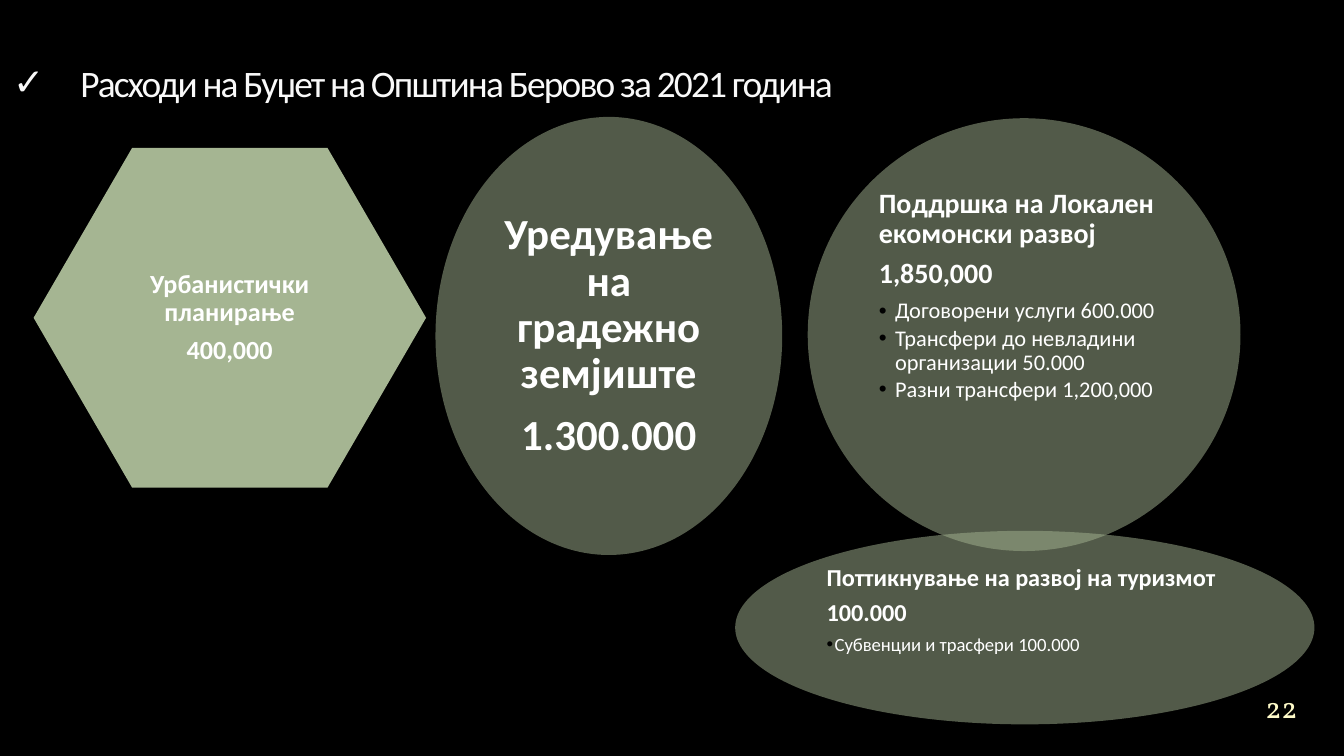
from lxml.etree import SubElement
from pptx import Presentation
from pptx.dml.color import RGBColor
from pptx.enum.shapes import MSO_SHAPE
from pptx.enum.text import MSO_ANCHOR, PP_ALIGN
from pptx.oxml.ns import qn
from pptx.util import Inches, Pt


def color(value):
    return RGBColor.from_string(value)


def add_text(page, place, inset, anchor, rows, align=PP_ALIGN.LEFT, spacing=0.9):
    box = page.shapes.add_textbox(*[Inches(length) for length in place])
    frame = box.text_frame
    margins = {f"margin_{side}": Inches(inset) for side in ("left", "top", "right", "bottom")}
    for name, value in {**margins, "word_wrap": True, "vertical_anchor": anchor}.items():
        setattr(frame, name, value)
    for index, (text, size, bold, gap, bullet) in enumerate(rows):
        para = frame.paragraphs[0] if index == 0 else frame.add_paragraph()
        layout = {"alignment": align, "line_spacing": spacing, "space_after": Pt(round(size * gap, 1))}
        for name, value in layout.items():
            setattr(para, name, value)
        span = para.add_run()
        span.text = text
        for name, value in {"name": "Calibri", "size": Pt(size), "bold": bold}.items():
            setattr(span.font, name, value)
        span.font.color.rgb = color("FFFFFF")
        if bullet:
            symbol, indent, tint = bullet
            properties = para._p.get_or_add_pPr()
            properties.set("marL", str(Inches(indent)))
            properties.set("indent", str(-Inches(indent)))
            SubElement(SubElement(properties, qn("a:buClr")), qn("a:srgbClr"), val=tint)
            SubElement(properties, qn("a:buFont"), typeface="Arial")
            SubElement(properties, qn("a:buChar"), char=symbol)
    return frame


deck = Presentation()
deck.slide_width = Inches(10)
deck.slide_height = Inches(10) * 9 // 16
page = deck.slides.add_slide(deck.slide_layouts[6])
page.background.fill.solid()
page.background.fill.fore_color.rgb = color("000000")

number = add_text(page, (9.2, 5.07, 0.67, 0.38), 0.1, MSO_ANCHOR.MIDDLE,
                  [("22", 16, False, 0, None)], PP_ALIGN.CENTER, 1.0)
number_font = number.paragraphs[0].runs[0].font
number_font.name = "Vollkorn"
number_font.color.rgb = color("FEFAC9")

title = add_text(page, (0, 0.31, 9.16, 0.57), 0.1, MSO_ANCHOR.BOTTOM,
                 [("Расходи на Буџет на Општина Берово за 2021 година", 20, False, 0,
                   ("✓", 0.5, "F9F9F9"))], spacing=1.0)
title_span = title.paragraphs[0].runs[0]
title_span.font.color.rgb = color("F9F9F9")
title_span.font._element.set("spc", "-100")

HEAD, ITEM = 0.35, 0.13
development_bullet = ("•", 0.12, "000000")
tourism_bullet = ("•", 0.06, "000000")
budget_items = [
    (MSO_SHAPE.HEXAGON, (0.25, 1.1, 2.92, 2.53), (0.73, 1.52, 1.96, 1.69), 0.02,
     MSO_ANCHOR.MIDDLE, PP_ALIGN.CENTER,
     [("Урбанистички планирање", 14, True, HEAD, None),
      ("400,000", 14, True, HEAD, None)]),
    (MSO_SHAPE.OVAL, (6.01, 0.88, 3.22, 3.22), (6.48, 1.35, 2.27, 2.27), 0.06,
     MSO_ANCHOR.TOP, PP_ALIGN.LEFT,
     [("Поддршка на Локален екомонски развој", 15, True, HEAD, None),
      ("1,850,000", 15, True, HEAD, None),
      ("Договорени услуги 600.000", 12, False, ITEM, development_bullet),
      ("Трансфери до невладини организации 50.000", 12, False, ITEM, development_bullet),
      ("Разни трансфери 1,200,000", 12, False, ITEM, development_bullet)]),
    (MSO_SHAPE.OVAL, (3.24, 0.87, 2.58, 3.26), (3.62, 1.35, 1.82, 2.3), 0.1,
     MSO_ANCHOR.MIDDLE, PP_ALIGN.CENTER,
     [("Уредување на градежно земјиште", 23, True, HEAD, None),
      ("1.300.000", 23, True, HEAD, None)]),
    (MSO_SHAPE.OVAL, (5.47, 3.95, 4.31, 1.44), (6.1, 4.16, 3.05, 1.02), 0.05,
     MSO_ANCHOR.TOP, PP_ALIGN.LEFT,
     [("Поттикнување на развој на туризмот", 13, True, HEAD, None),
      ("100.000", 13, True, HEAD, None),
      ("Субвенции и трасфери 100.000", 10, False, ITEM, tourism_bullet)]),
]

for kind, place, text_place, inset, anchor, align, rows in budget_items:
    shape = page.shapes.add_shape(kind, *[Inches(length) for length in place])
    shape.shadow.inherit = False
    shape.line.fill.background()
    shape.fill.solid()
    shape.fill.fore_color.rgb = color("A5B592")
    properties = shape._element.spPr
    if kind == MSO_SHAPE.HEXAGON:
        shape.adjustments[0] = 0.29
        effects = properties.find(qn("a:effectLst"))
        shadow = SubElement(effects, qn("a:outerShdw"), blurRad=str(Pt(7.5)), dist="0", dir="0")
        tint = SubElement(shadow, qn("a:srgbClr"), val="000000")
    else:
        tint = properties.find(qn("a:solidFill")).find(qn("a:srgbClr"))
    SubElement(tint, qn("a:alpha"), val="50000")
    add_text(page, text_place, inset, anchor, rows, align)

deck.save("out.pptx")
